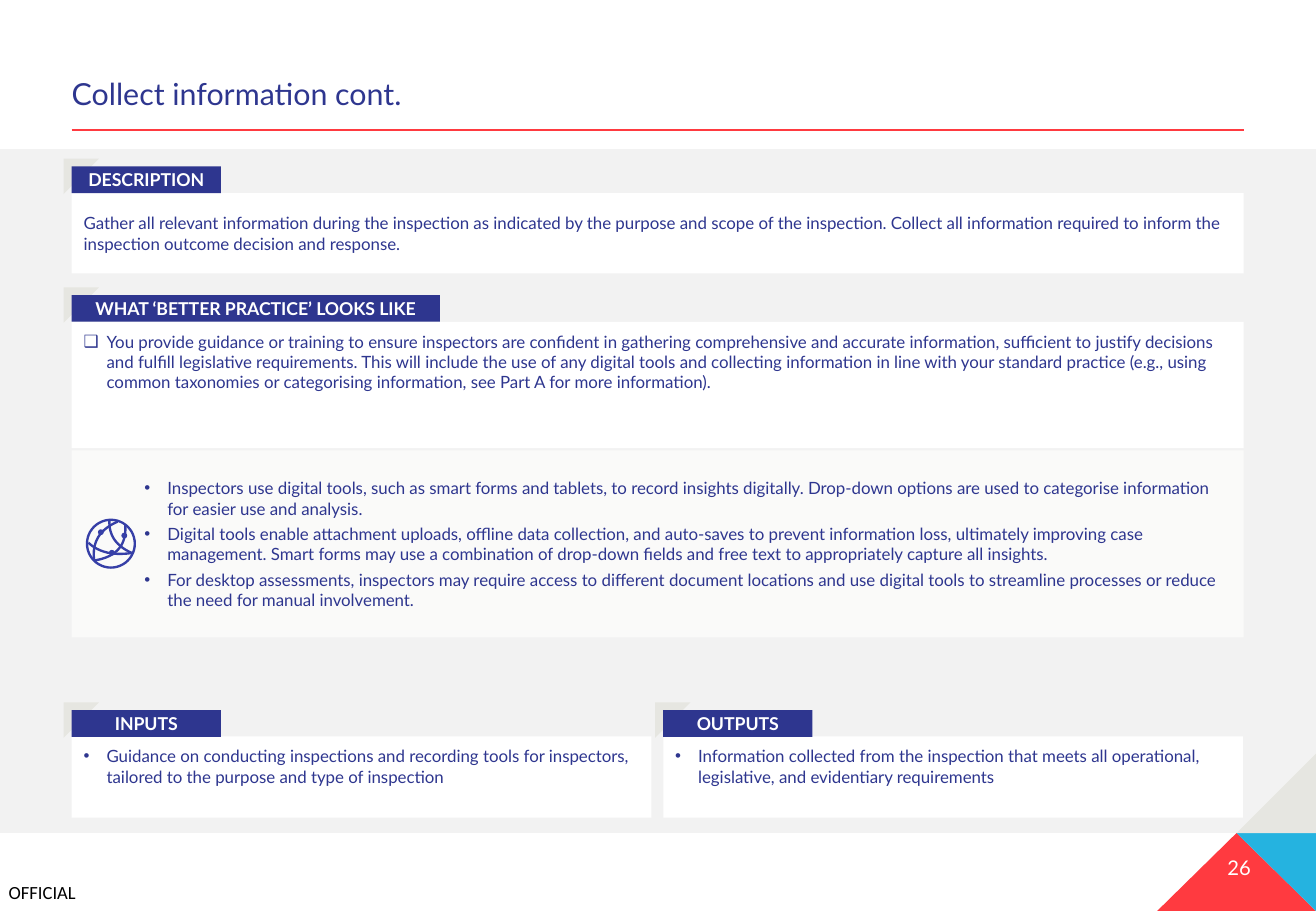
from lxml.etree import SubElement
from pptx import Presentation
from pptx.dml.color import RGBColor
from pptx.enum.shapes import MSO_CONNECTOR, MSO_SHAPE
from pptx.enum.text import MSO_ANCHOR, MSO_AUTO_SIZE, PP_ALIGN
from pptx.oxml.ns import qn
from pptx.util import Cm, Pt

NAVY = RGBColor(0x2E, 0x36, 0x8F)
INK = RGBColor(0x36, 0x3F, 0xA7)
RED = RGBColor(0xFF, 0x3A, 0x40)
BLUE = RGBColor(0x25, 0xB3, 0xE0)
STONE = RGBColor(0xE6, 0xE6, 0xE1)
GREY = RGBColor(0xF2, 0xF2, 0xF2)
PALE = RGBColor(0xFA, 0xFA, 0xF9)
WHITE = RGBColor(0xFF, 0xFF, 0xFF)
BLACK = RGBColor(0, 0, 0)

LEFT, WIDE = 1.5, 24.51
HALF, RIGHT = 12.12, 13.87
TAB = 0.56

BETTER = [
    "You provide guidance or training to ensure inspectors are confident in gathering "
    "comprehensive and accurate information, sufficient to justify decisions and fulfill "
    "legislative requirements. This will include the use of any digital tools and collecting "
    "information in line with your standard practice (e.g., using common taxonomies or "
    "categorising information, see Part A for more information)."
]
TOOLS = [
    "Inspectors use digital tools, such as smart forms and tablets, to record insights "
    "digitally. Drop-down options are used to categorise information for easier use and analysis.",
    "Digital tools enable attachment uploads, offline data collection, and auto-saves to prevent "
    "information loss, ultimately improving case management. Smart forms may use a combination of "
    "drop-down fields and free text to appropriately capture all insights.",
    "For desktop assessments, inspectors may require access to different document locations and "
    "use digital tools to streamline processes or reduce the need for manual involvement.",
]
INPUTS = [
    "Guidance on conducting inspections and recording tools for inspectors, "
    "tailored to the purpose and type of inspection"
]
OUTPUTS = [
    "Information collected from the inspection that meets all operational, "
    "legislative, and evidentiary requirements"
]
ABOUT = (
    "Gather all relevant information during the inspection as indicated by the purpose and scope "
    "of the inspection. Collect all information required to inform the inspection outcome "
    "decision and response."
)


def place(shape, x, y, w, h):
    shape.left, shape.top, shape.width, shape.height = Cm(x), Cm(y), Cm(w), Cm(h)


def paint(shape, fill):
    shape.shadow.inherit = False
    shape.fill.solid()
    shape.fill.fore_color.rgb = fill
    shape.line.fill.background()


def inset(frame, side, edge):
    frame.margin_left = frame.margin_right = Cm(side)
    frame.margin_top = frame.margin_bottom = Cm(edge)


def write(para, text, size, tint, font="Lato", bold=False, align=PP_ALIGN.LEFT):
    para.alignment = align
    run = para.add_run()
    run.text = text
    run.font.name, run.font.size, run.font.bold = font, Pt(size), bold
    run.font.color.rgb = tint


def add_box(slide, kind, x, y, w, h, fill):
    box = slide.shapes.add_shape(kind, Cm(x), Cm(y), Cm(w), Cm(h))
    paint(box, fill)
    return box


def add_text(slide, x, y, w, h, text, size, tint, **style):
    box = slide.shapes.add_textbox(Cm(x), Cm(y), Cm(w), Cm(h))
    box.text_frame.word_wrap = False
    write(box.text_frame.paragraphs[0], text, size, tint, **style)
    return box.text_frame


def add_tab(slide, x, y, w, text):
    frame = add_box(slide, MSO_SHAPE.HALF_FRAME, x - 0.17, y - 0.16, 0.74, 0.74, STONE)
    frame.adjustments[0] = frame.adjustments[1] = 0.238
    tab = add_box(slide, MSO_SHAPE.RECTANGLE, x, y, w, TAB, NAVY)
    tab.text_frame.vertical_anchor = MSO_ANCHOR.MIDDLE
    write(tab.text_frame.paragraphs[0], text, 10.5, WHITE, bold=True, align=PP_ALIGN.CENTER)


def add_list(slide, slot, x, y, w, h, items, fill=WHITE, mark="•", level=0, after=3):
    body = slide.placeholders[slot]
    place(body, x, y, w, h)
    body.fill.solid()
    body.fill.fore_color.rgb = fill
    frame = body.text_frame
    frame.auto_size = MSO_AUTO_SIZE.NONE
    frame.vertical_anchor = MSO_ANCHOR.MIDDLE if level else MSO_ANCHOR.TOP
    inset(frame, 0.25, 0.2)
    for i, item in enumerate(items):
        para = frame.add_paragraph() if i else frame.paragraphs[0]
        para.level = level
        props = para._p.get_or_add_pPr()
        props.set("marL", str(Cm(0.48 + 1.27 * level)))
        props.set("indent", str(-Cm(0.48)))
        SubElement(props, qn("a:buFont")).set("typeface", "Arial")
        SubElement(props, qn("a:buChar")).set("char", mark)
        para.space_before, para.space_after = Pt(0), Pt(after)
        write(para, item, 10, NAVY)


def add_path(slide, points, close):
    spots = [(Cm(x), Cm(y)) for x, y in points]
    path = slide.shapes.build_freeform(*spots[0])
    path.add_line_segments(spots[1:], close=close)
    shape = path.convert_to_shape()
    shape.shadow.inherit = False
    return shape


def add_curve(slide, start, bend, end):
    steps = [i / 16 for i in range(17)]
    points = [
        tuple((1 - t) ** 2 * a + 2 * t * (1 - t) * b + t * t * c
              for a, b, c in zip(start, bend, end))
        for t in steps
    ]
    curve = add_path(slide, points, False)
    curve.fill.background()
    curve.line.color.rgb = INK
    curve.line.width = Pt(1.4)


def add_globe(slide):
    ring = add_box(slide, MSO_SHAPE.OVAL, 1.82, 10.87, 1, 1, INK)
    ring.fill.background()
    ring.line.color.rgb = INK
    ring.line.width = Pt(1.4)
    for arc in (
        ((1.85, 11.35), (2.18, 11.66), (2.79, 11.56)),
        ((1.97, 11.71), (1.9, 11.15), (2.46, 10.91)),
        ((2.29, 10.87), (2.26, 11.35), (2.77, 11.57)),
        ((2.62, 10.97), (2.67, 11.61), (1.98, 11.72)),
    ):
        add_curve(slide, *arc)
    for x, y in ((2.11, 11.13), (2.6, 11.2), (2.34, 11.56)):
        add_box(slide, MSO_SHAPE.OVAL, x - 0.06, y - 0.06, 0.12, 0.12, INK)


def add_corner(slide):
    peak, edge = (25.86, 17.42), 27.52
    for fill, points in (
        (RED, [peak, (24.2, 19.05), (edge, 19.05)]),
        (BLUE, [(edge, 17.42), peak, (edge, 19.05)]),
        (STONE, [(edge, 15.76), peak, (edge, 17.42)]),
    ):
        paint(add_path(slide, points, True), fill)
    frame = add_text(slide, 23.95, 17.75, 2.21, 0.76, "26", 12, WHITE, align=PP_ALIGN.RIGHT)
    frame.word_wrap = True
    inset(frame, 0, 0.13)


def add_head(slide):
    title = slide.shapes.title
    place(title, LEFT, 1.5, WIDE, 0.97)
    frame = title.text_frame
    frame.auto_size = MSO_AUTO_SIZE.NONE
    frame.vertical_anchor = MSO_ANCHOR.BOTTOM
    inset(frame, 0, 0.13)
    para = frame.paragraphs[0]
    para.line_spacing = 0.9
    write(para, "Collect information cont.", 18, NAVY)
    rule = slide.shapes.add_connector(
        MSO_CONNECTOR.STRAIGHT, Cm(LEFT), Cm(2.71), Cm(LEFT + WIDE), Cm(2.71))
    rule.line.color.rgb = RED
    rule.line.width = Pt(1.25)
    SubElement(rule._element.spPr, qn("a:effectLst"))


def add_about(slide):
    box = add_box(slide, MSO_SHAPE.RECTANGLE, LEFT, 4.04, WIDE, 1.68, WHITE)
    box.text_frame.vertical_anchor = MSO_ANCHOR.MIDDLE
    para = box.text_frame.paragraphs[0]
    para.space_after = Pt(3)
    write(para, ABOUT, 10, NAVY)


def main():
    deck = Presentation()
    deck.slide_width, deck.slide_height = Cm(27.52), Cm(19.05)
    slide = deck.slides.add_slide(deck.slide_layouts[4])
    band = add_box(slide, MSO_SHAPE.RECTANGLE, 0, 3.12, 27.52, 14.3, GREY)
    slide.shapes._spTree.insert(2, band._element)
    add_head(slide)
    add_corner(slide)
    inset(add_text(slide, 0.18, 18.42, 1.5, 0.46, "OFFICIAL", 11, BLACK, font="Calibri"), 0, 0)
    add_about(slide)
    add_list(slide, 1, LEFT, 6.73, WIDE, 2.64, BETTER, mark="❑", after=2)
    add_list(slide, 2, LEFT, 9.42, WIDE, 3.91, TOOLS, fill=PALE, level=1)
    add_list(slide, 3, LEFT, 15.4, HALF, 1.7, INPUTS)
    add_list(slide, 4, RIGHT, 15.4, HALF, 1.7, OUTPUTS)
    add_tab(slide, LEFT, 3.48, 3.12, "DESCRIPTION")
    add_tab(slide, LEFT, 6.17, 7.7, "WHAT ‘BETTER PRACTICE’ LOOKS LIKE")
    add_tab(slide, LEFT, 14.85, 3.12, "INPUTS")
    add_tab(slide, RIGHT, 14.85, 3.12, "OUTPUTS")
    add_globe(slide)
    deck.save("out.pptx")


if __name__ == "__main__":
    main()
